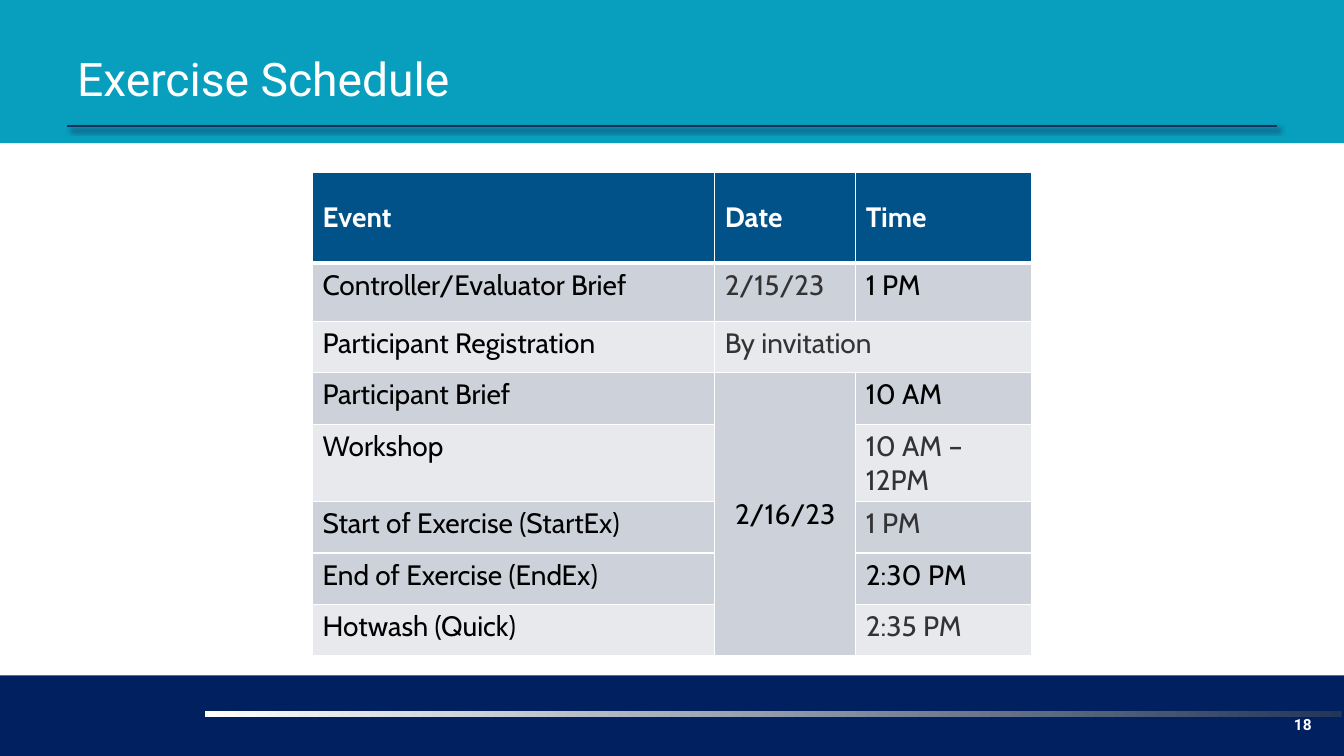
from dataclasses import dataclass

import pptx
import pptx.dml.color
import pptx.enum.shapes
import pptx.enum.text
import pptx.oxml
import pptx.oxml.ns
import pptx.util

Rgb = pptx.dml.color.RGBColor.from_string
Align = pptx.enum.text.PP_ALIGN
Anchor = pptx.enum.text.MSO_ANCHOR


@dataclass(frozen=True)
class Theme:
    white: str = "FFFFFF"
    black: str = "000000"
    grey: str = "333333"
    teal: str = "079FBD"
    navy: str = "012060"
    slate: str = "243658"
    rule: str = "16325C"
    shadow: str = "1D2B58"
    head: str = "005288"
    dark_band: str = "CCD1DA"
    light_band: str = "E7E9ED"
    title_font: str = "Roboto"
    table_font: str = "Cabin"
    title_size: int = 33
    table_size: int = 20
    number_size: int = 11


@dataclass(frozen=True)
class Box:
    """Place in percent of the slide's width and height."""
    left: float
    top: float
    width: float
    height: float


@dataclass(frozen=True)
class Entry:
    text: str
    color: str = Theme.black
    anchor: Anchor = Anchor.TOP
    align: Align = Align.LEFT
    rows: int = 1
    cols: int = 1


@dataclass(frozen=True)
class Row:
    height: float
    fill: str
    entries: tuple[Entry | None, ...]


T = Theme()
BANDS = [(Box(0, 89.33, 100, 10.67), T.navy), (Box(0, 0, 100, 18.93), T.teal)]
FOOTER_BAR = Box(15.23, 94, 84.6, 0.8)
TITLE_RULE = Box(5, 16.67, 90, 0)
TITLE = Box(5, 4, 90, 12.67)
NUMBER = Box(92.25, 94, 6.08, 4)
TABLE_LEFT, TABLE_TOP = 23.25, 22.8
COLUMNS = (29.93, 10.5, 13.05)
ROW = 6.8

SCHEDULE = [
    Row(12, T.head, tuple(Entry(t, T.white, Anchor.MIDDLE) for t in ("Event", "Date", "Time"))),
    Row(7.73, T.dark_band, (Entry("Controller/Evaluator Brief"), Entry("2/15/23", T.grey), Entry("1 PM"))),
    Row(ROW, T.light_band, (Entry("Participant Registration"), Entry("By invitation", T.grey, cols=2), None)),
    Row(ROW, T.dark_band, (Entry("Participant Brief"),
                           Entry("2/16/23", anchor=Anchor.MIDDLE, align=Align.CENTER, rows=5),
                           Entry("10 AM"))),
    Row(ROW, T.light_band, (Entry("Workshop"), None, Entry("10 AM – 12PM", T.grey))),
    Row(ROW, T.dark_band, (Entry("Start of Exercise (StartEx)"), None, Entry("1 PM", T.grey))),
    Row(ROW, T.dark_band, (Entry("End of Exercise (EndEx)"), None, Entry("2:30 PM"))),
    Row(ROW, T.light_band, (Entry("Hotwash (Quick)"), None, Entry("2:35 PM", T.grey))),
]

prs = pptx.Presentation()
prs.slide_width = pptx.util.Inches(13.33)
prs.slide_height = pptx.util.Inches(7.5)
slide = prs.slides.add_slide(prs.slide_layouts[6])


def across(percent: float) -> int:
    return round(prs.slide_width * percent / 100)


def down(percent: float) -> int:
    return round(prs.slide_height * percent / 100)


def place(box: Box) -> tuple[int, int, int, int]:
    return across(box.left), down(box.top), across(box.width), down(box.height)


def write(tf, text: str, *, font: str, size: int, color: str, bold: bool = False,
          align: Align = Align.LEFT) -> None:
    tf.word_wrap = True
    p = tf.paragraphs[0]
    p.alignment = align
    r = p.add_run()
    r.text = text
    r.font.name, r.font.size, r.font.bold = font, pptx.util.Pt(size), bold
    r.font.color.rgb = Rgb(color)


def add_text(box: Box, text: str, anchor: Anchor = Anchor.TOP, **fmt) -> None:
    tf = slide.shapes.add_textbox(*place(box)).text_frame
    tf.vertical_anchor = anchor
    write(tf, text, **fmt)


def add_bar(box: Box, *colors: str) -> None:
    """One colour gives a solid bar, two a gradient from right to left."""
    sp = slide.shapes.add_shape(pptx.enum.shapes.MSO_SHAPE.RECTANGLE, *place(box))
    sp.shadow.inherit = False
    sp.line.fill.background()
    if len(colors) == 1:
        sp.fill.solid()
        sp.fill.fore_color.rgb = Rgb(colors[0])
        return
    sp.fill.gradient()
    sp.fill.gradient_angle = 180
    for stop, color, position in zip(sp.fill.gradient_stops, colors, (0, 1)):
        stop.color.rgb = Rgb(color)
        stop.position = position


def add_rule(box: Box) -> None:
    x, y, w, h = place(box)
    line = slide.shapes.add_connector(pptx.enum.shapes.MSO_CONNECTOR.STRAIGHT, x, y, x + w, y + h)
    line.line.color.rgb = Rgb(T.rule)
    line.line.width = pptx.util.Pt(1.5)
    line._element.spPr.append(pptx.oxml.parse_xml(
        f'<a:effectLst {pptx.oxml.ns.nsdecls("a")}>'
        f'<a:outerShdw blurRad="{pptx.util.Pt(4)}" dist="{pptx.util.Pt(3)}" dir="2700000">'
        f'<a:srgbClr val="{T.shadow}"><a:alpha val="79000"/></a:srgbClr>'
        '</a:outerShdw></a:effectLst>'))


def set_borders(cell, top: float, bottom: float) -> None:
    tc_pr = cell._tc.get_or_add_tcPr()
    for side, points in (("L", 1), ("R", 1), ("T", top), ("B", bottom)):
        tc_pr.append(pptx.oxml.parse_xml(
            f'<a:ln{side} {pptx.oxml.ns.nsdecls("a")} w="{pptx.util.Pt(points)}">'
            f'<a:solidFill><a:srgbClr val="{T.white}"/></a:solidFill></a:ln{side}>'))


def add_schedule(rows: list[Row]) -> None:
    box = Box(TABLE_LEFT, TABLE_TOP, sum(COLUMNS), sum(row.height for row in rows))
    table = slide.shapes.add_table(len(rows), len(COLUMNS), *place(box)).table
    table.horz_banding = False
    for column, width in zip(table.columns, COLUMNS):
        column.width = across(width)
    for i, row in enumerate(rows):
        table.rows[i].height = down(row.height)
        for j, entry in enumerate(row.entries):
            cell = table.cell(i, j)
            set_borders(cell, top=3 if i == 1 else 1, bottom=3 if i == 0 else 1)
            cell.fill.solid()
            cell.fill.fore_color.rgb = Rgb(row.fill)
            if entry is None:
                continue
            cell.vertical_anchor = entry.anchor
            write(cell.text_frame, entry.text, font=T.table_font, size=T.table_size,
                  color=entry.color, bold=i == 0, align=entry.align)
            if entry.rows * entry.cols > 1:
                cell.merge(table.cell(i + entry.rows - 1, j + entry.cols - 1))


def main() -> None:
    for box, color in BANDS:
        add_bar(box, color)
    add_bar(FOOTER_BAR, T.slate, T.white)
    add_rule(TITLE_RULE)
    add_text(TITLE, "Exercise Schedule", Anchor.MIDDLE,
             font=T.title_font, size=T.title_size, color=T.white)
    add_text(NUMBER, "18", font=T.title_font, size=T.number_size, color=T.white,
             bold=True, align=Align.RIGHT)
    add_schedule(SCHEDULE)
    prs.save("out.pptx")


if __name__ == "__main__":
    main()
